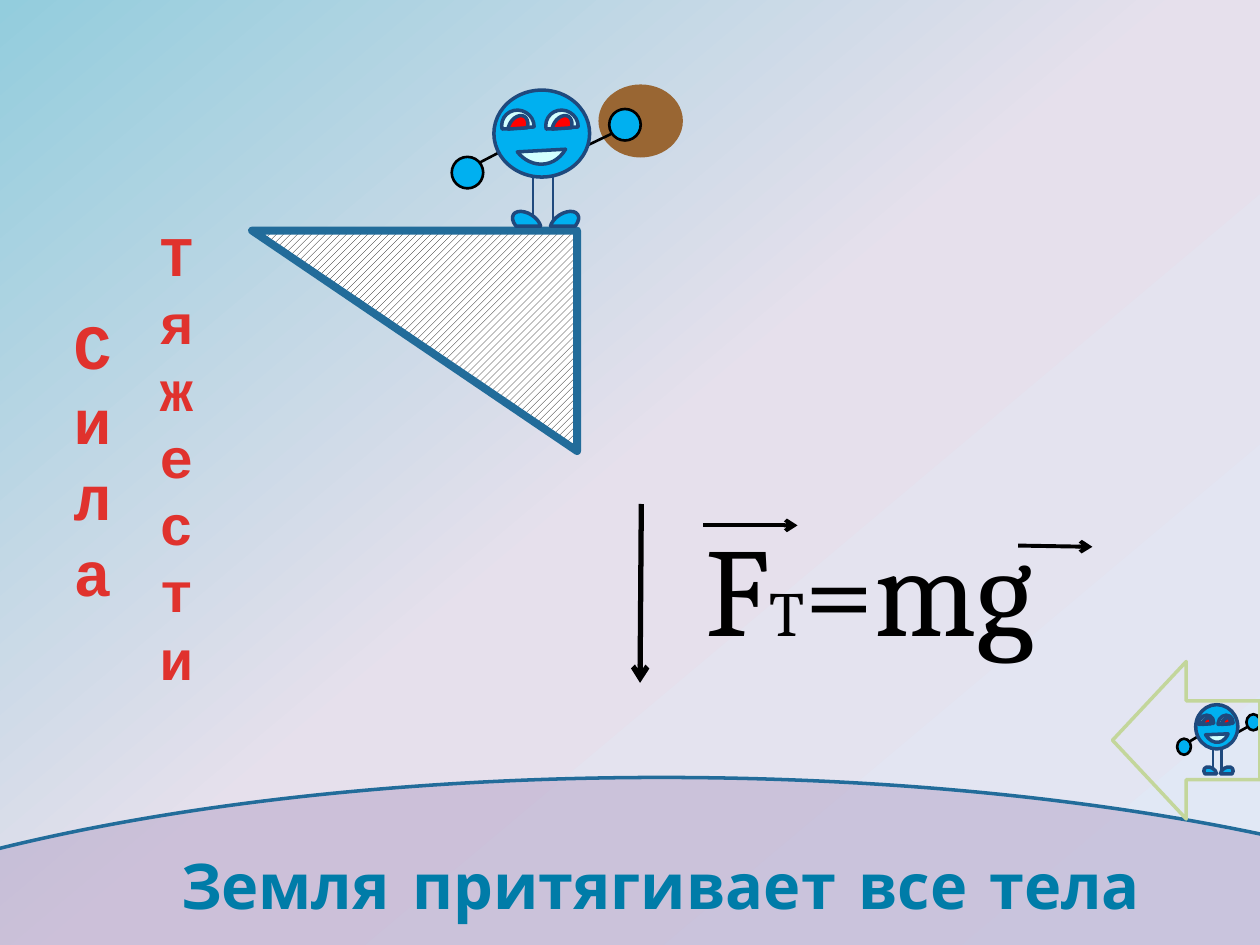
from copy import deepcopy

from lxml import etree
from pptx import Presentation
from pptx.dml.color import RGBColor
from pptx.enum import dml, shapes, text
from pptx.oxml.ns import qn
from pptx.util import Inches, Pt

COLORS = {
    "sky": "93CDDD", "haze": "E6E0EC", "horizon": "E1E8F5",
    "stone": "996633", "earth": "B3A2C7", "edge": "226C9A",
    "red_top": "E0322D", "red_bottom": "A2201C",
    "body": "00B0F0", "outline": "1F497D", "white_eye": "D2FFFF", "pupil": "FF0000",
    "black": "000000", "white": "FFFFFF", "caption": "007CA8", "back": "C3D69B",
}
RGB = {name: RGBColor.from_string(value) for name, value in COLORS.items()}
KIND = shapes.MSO_SHAPE

prs = Presentation()
prs.slide_width, prs.slide_height = Inches(10), Inches(7.5)
slide = prs.slides.add_slide(prs.slide_layouts[6])


def add_form(kind, box, fill=None, line=None, width=2, rotation=0, adjust=()):
    form = slide.shapes.add_shape(kind, *map(Inches, box))
    form.shadow.inherit = False
    form.rotation = rotation
    for i, value in enumerate(adjust):
        form.adjustments[i] = value
    if fill:
        form.fill.solid()
        form.fill.fore_color.rgb = RGB[fill]
    else:
        form.fill.background()
    if line:
        form.line.color.rgb = RGB[line]
        form.line.width = Pt(width)
    else:
        form.line.fill.background()
    return form


def add_line(start, end, color="black", width=1.5, arrow=False):
    line = slide.shapes.add_connector(
        shapes.MSO_CONNECTOR.STRAIGHT, *map(Inches, (*start, *end)))
    line.line.color.rgb = RGB[color]
    line.line.width = Pt(width)
    if arrow:
        etree.SubElement(line.line._get_or_add_ln(), qn("a:tailEnd"), type="arrow")
    etree.SubElement(line._element.spPr, qn("a:effectLst"))


# Background gradient with three stops
sky = slide.background.fill
sky.gradient()
sky.gradient_angle = 310
first_stop = sky.gradient_stops[0]._gs
first_stop.addnext(deepcopy(first_stop))
for stop, position, name in zip(sky.gradient_stops, (0, 0.5, 1), ("sky", "haze", "horizon")):
    stop.position = position
    stop.color.rgb = RGB[name]

# Stone and the Earth
add_form(KIND.OVAL, (4.75, 0.67, 0.67, 0.58), "stone")
earth = add_form(KIND.OVAL, (-3, 6.17, 16.5, 4.92), "earth", "edge")
earth_color = earth._element.spPr.find(qn("a:solidFill"))[0]
etree.SubElement(earth_color, qn("a:alpha"), val="50000")

# Vertical title
for word, box, size in (("Тяжести", (1, 1.33, 0.8, 4.58), 32),
                        ("Сила", (0.3, 1.92, 0.87, 3.42), 36)):
    title = slide.shapes.add_textbox(*map(Inches, box)).text_frame
    title.text = word
    title.word_wrap = True
    title.auto_size = text.MSO_AUTO_SIZE.SHAPE_TO_FIT_TEXT
    title._txBody.bodyPr.set("vert", "wordArtVert")
    title.paragraphs[0].alignment = text.PP_ALIGN.CENTER
    font = title.paragraphs[0].runs[0].font
    font.name, font.size, font.bold = "Courier New", Pt(size), True
    font._rPr.set("spc", "50")
    font.fill.gradient()
    font.fill.gradient_angle = 270
    for stop, position, name in zip(font.fill.gradient_stops, (0.25, 1),
                                    ("red_top", "red_bottom")):
        stop.position = position
        stop.color.rgb = RGB[name]

# Cliff
cliff = add_form(KIND.RIGHT_TRIANGLE, (2, 1.83, 2.58, 1.75), None, "edge", 4.5, 180)
cliff.fill.patterned()
cliff.fill.pattern = dml.MSO_PATTERN.WIDE_UPWARD_DIAGONAL
cliff.fill.fore_color.rgb = RGB["black"]
cliff.fill.back_color.rgb = RGB["white"]

# Little man: limbs (start, end, colour), then parts
# (kind, centre x, centre y, width, height, fill, line, line width, rotation, adjustments)
LIMBS = [
    ((0.42, 0.48), (0.17, 0.61), "black"),
    ((0.65, 0.69), (0.65, 1.08), "outline"),
    ((0.81, 0.69), (0.81, 1.08), "outline"),
    ((1.09, 0.44), (1.34, 0.32), "black"),
]
EYE, FOOT = (28.964, 145.432), (24.253, 149.555)
PARTS = [
    (KIND.OVAL, 0.72, 0.35, 0.76, 0.69, "body", "outline", 2, 0, ()),
    (KIND.CHORD, 0.7, 0.29, 0.5, 0.61, "white_eye", "outline", 2, 350.6, (30.472, 83.762)),
]
for eye_x in (0.88, 0.53):
    PARTS += [
        (KIND.CHORD, eye_x, 0.29, 0.25, 0.26, "white_eye", "outline", 2, 120.9, EYE),
        (KIND.CHORD, eye_x, 0.3, 0.2, 0.14, "pupil", "outline", 2, 120.9, EYE),
    ]
PARTS += [(KIND.CHORD, x, 1.06, 0.15, 0.25, "body", "outline", 2, turn, FOOT)
          for x, turn in ((0.9, 237), (0.6, 123))]
PARTS += [(KIND.OVAL, x, y, 0.25, 0.25, "body", "black", 1.5, 0, ())
          for x, y in ((0.13, 0.66), (1.38, 0.28))]

# The man stands on the cliff and, smaller, in the back arrow
for left, top, scale_x, scale_y in ((3.58, 0.71, 1, 1), (9.34, 5.59, 0.44, 0.51)):
    for start, end, color in LIMBS:
        add_line(*((left + x * scale_x, top + y * scale_y) for x, y in (start, end)), color)
    for kind, x, y, w, h, fill, line, width, rotation, adjust in PARTS:
        sideways = 45 < rotation < 315  # a turned part swaps its scales
        w *= scale_y if sideways else scale_x
        h *= scale_x if sideways else scale_y
        box = (left + x * scale_x - w / 2, top + y * scale_y - h / 2, w, h)
        part = add_form(kind, box, fill, line, width, rotation, adjust)
        if rotation == 237:
            part._element.spPr.find(qn("a:xfrm")).set("flipH", "1")
add_form(KIND.LEFT_ARROW, (8.83, 5.25, 1.17, 1.25), None, "back")

# Formula with vector arrows, and the force arrow
formula = slide.shapes.add_textbox(*map(Inches, (5.5, 4, 3.42, 1.31))).text_frame
formula.word_wrap = True
formula.auto_size = text.MSO_AUTO_SIZE.SHAPE_TO_FIT_TEXT
for symbols, size in (("F", 72), ("T", 36), ("=mg", 72)):
    run = formula.paragraphs[0].add_run()
    run.text = symbols
    run.font.name, run.font.size = "Cambria", Pt(size)
    run.font.color.rgb = RGB["black"]
add_line((5.58, 4.17), (6.33, 4.17), width=2.25, arrow=True)
add_line((8.08, 4.33), (8.67, 4.34), width=2.25, arrow=True)
add_line((5.09, 4), (5.08, 5.42), width=3, arrow=True)

# Caption on the Earth
caption = slide.shapes.add_textbox(*map(Inches, (1.33, 6.67, 7.83, 1.3))).text_frame
caption.text = "Земля притягивает все тела"
caption.word_wrap = False
caption.paragraphs[0].alignment = text.PP_ALIGN.CENTER
font = caption.paragraphs[0].runs[0].font
font.name, font.size, font.bold = "Comic Neue", Pt(36), True
font.color.rgb = RGB["caption"]
contour = etree.Element(qn("a:ln"), w=str(Pt(0.75)))
contour_fill = etree.SubElement(contour, qn("a:solidFill"))
etree.SubElement(contour_fill, qn("a:srgbClr"), val=COLORS["body"])
font._rPr.insert(0, contour)

prs.save("out.pptx")
